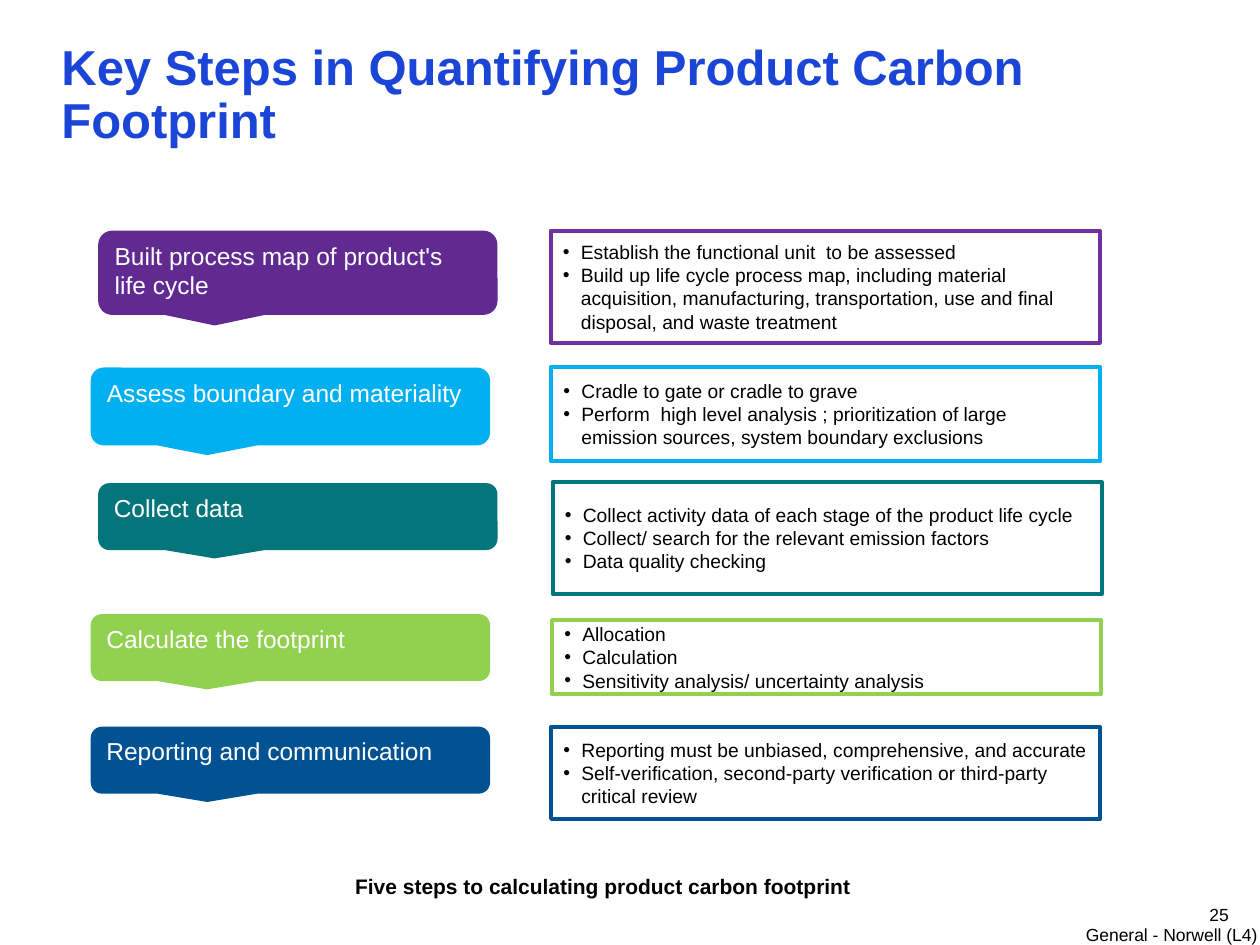
from lxml import etree
from pptx import Presentation
from pptx.dml.color import RGBColor
from pptx.enum.shapes import MSO_SHAPE
from pptx.enum.text import MSO_ANCHOR, PP_ALIGN
from pptx.oxml.ns import qn
from pptx.util import Cm, Pt

CALLOUT = MSO_SHAPE.ROUNDED_RECTANGULAR_CALLOUT
RECTANGLE = MSO_SHAPE.RECTANGLE
TOP, MIDDLE = MSO_ANCHOR.TOP, MSO_ANCHOR.MIDDLE
LEFT, RIGHT = PP_ALIGN.LEFT, PP_ALIGN.RIGHT

COLORS = {
    "title": "1A45D7", "black": "000000", "white": "FFFFFF",
    "violet": "602A91", "purple": "7030A0", "sky": "00B0F0",
    "teal": "05757C", "green": "92D050", "navy": "005293",
}
CALLOUT_WIDTH = 8.05
DETAIL_WIDTH = 11.07
BULLET_INDENT = Cm(0.36)


def write(box, lines, size, color, bold=False, align=LEFT, anchor=TOP, bullets=False):
    frame = box.text_frame
    frame.word_wrap = True
    frame.vertical_anchor = anchor
    for index, line in enumerate(lines):
        para = frame.add_paragraph() if index else frame.paragraphs[0]
        para.alignment = align
        if bullets:
            props = para._p.get_or_add_pPr()
            props.set("marL", str(BULLET_INDENT))
            props.set("indent", str(-BULLET_INDENT))
            etree.SubElement(props, qn("a:buFont")).set("typeface", "Arial")
            etree.SubElement(props, qn("a:buChar")).set("char", "•")
        span = para.add_run()
        span.text = line
        span.font.name = "Arial"
        span.font.size = Pt(size)
        span.font.bold = bold
        span.font.color.rgb = RGBColor.from_string(COLORS[color])


def add_text(left, top, width, height, text, size, color="black", inset=None, **style):
    box = page.shapes.add_textbox(Cm(left), Cm(top), Cm(width), Cm(height))
    if inset is not None:
        frame = box.text_frame
        frame.margin_left = frame.margin_right = Cm(0)
        frame.margin_top = frame.margin_bottom = Cm(inset)
    write(box, [text], size, color, **style)
    return box


deck = Presentation()
deck.slide_width, deck.slide_height = Cm(25.4), Cm(19.05)
page = deck.slides.add_slide(deck.slide_layouts[6])

# Footer
label = add_text(21.89, 18.62, 3.61, 0.43, "General - Norwell (L4)", 10, inset=0)
label.text_frame.word_wrap = False
add_text(23.5, 18.19, 1.27, 0.51, "25", 10, inset=0.13, align=RIGHT, anchor=MIDDLE)

# Title
title = add_text(0.99, 0.74, 20.52, 0.81,
                 "Key Steps in Quantifying Product Carbon Footprint", 28, "title", bold=True)
title.text_frame.paragraphs[0].line_spacing = 0.9

# Steps: name, fill, (left, top, height), border, (left, top, height), details
steps = [
    ("Built process map of product's life cycle", "violet", (1.98, 4.65, 1.7),
     "purple", (11.1, 4.65, 2.26),
     ["Establish the functional unit  to be assessed",
      "Build up life cycle process map, including material acquisition, manufacturing, "
      "transportation, use and final disposal, and waste treatment"]),
    ("Assess boundary and materiality", "sky", (1.83, 7.41, 1.57),
     "sky", (11.11, 7.39, 1.91),
     ["Cradle to gate or cradle to grave",
      "Perform  high level analysis ; prioritization of large emission sources, "
      "system boundary exclusions"]),
    ("Collect data", "teal", (1.98, 9.74, 1.35),
     "teal", (11.14, 9.72, 2.26),
     ["Collect activity data of each stage of the product life cycle",
      "Collect/ search for the relevant emission factors",
      "Data quality checking"]),
    ("Calculate the footprint", "green", (1.83, 12.38, 1.35),
     "green", (11.13, 12.5, 1.5),
     ["Allocation", "Calculation", "Sensitivity analysis/ uncertainty analysis"]),
    ("Reporting and communication", "navy", (1.83, 14.65, 1.35),
     "navy", (11.11, 14.66, 1.85),
     ["Reporting must be unbiased, comprehensive, and accurate",
      "Self-verification, second-party verification or third-party critical review"]),
]
for name, fill, (left, top, height), border, (x, y, tall), details in steps:
    # Outlined box with the details
    detail = page.shapes.add_shape(RECTANGLE, Cm(x), Cm(y), Cm(DETAIL_WIDTH), Cm(tall))
    detail.shadow.inherit = False
    detail.fill.background()
    detail.line.color.rgb = RGBColor.from_string(COLORS[border])
    detail.line.width = Pt(2.25)
    write(detail, details, 11, "black", anchor=MIDDLE, bullets=True)

    # Filled callout with the step name
    callout = page.shapes.add_shape(CALLOUT, Cm(left), Cm(top), Cm(CALLOUT_WIDTH), Cm(height))
    callout.shadow.inherit = False
    callout.fill.solid()
    callout.fill.fore_color.rgb = RGBColor.from_string(COLORS[fill])
    callout.line.fill.background()
    write(callout, [name], 14, "white")

# Caption
add_text(7.16, 17.6, 14.05, 0.51, "Five steps to calculating product carbon footprint", 12,
         inset=0, bold=True)

deck.save("out.pptx")
